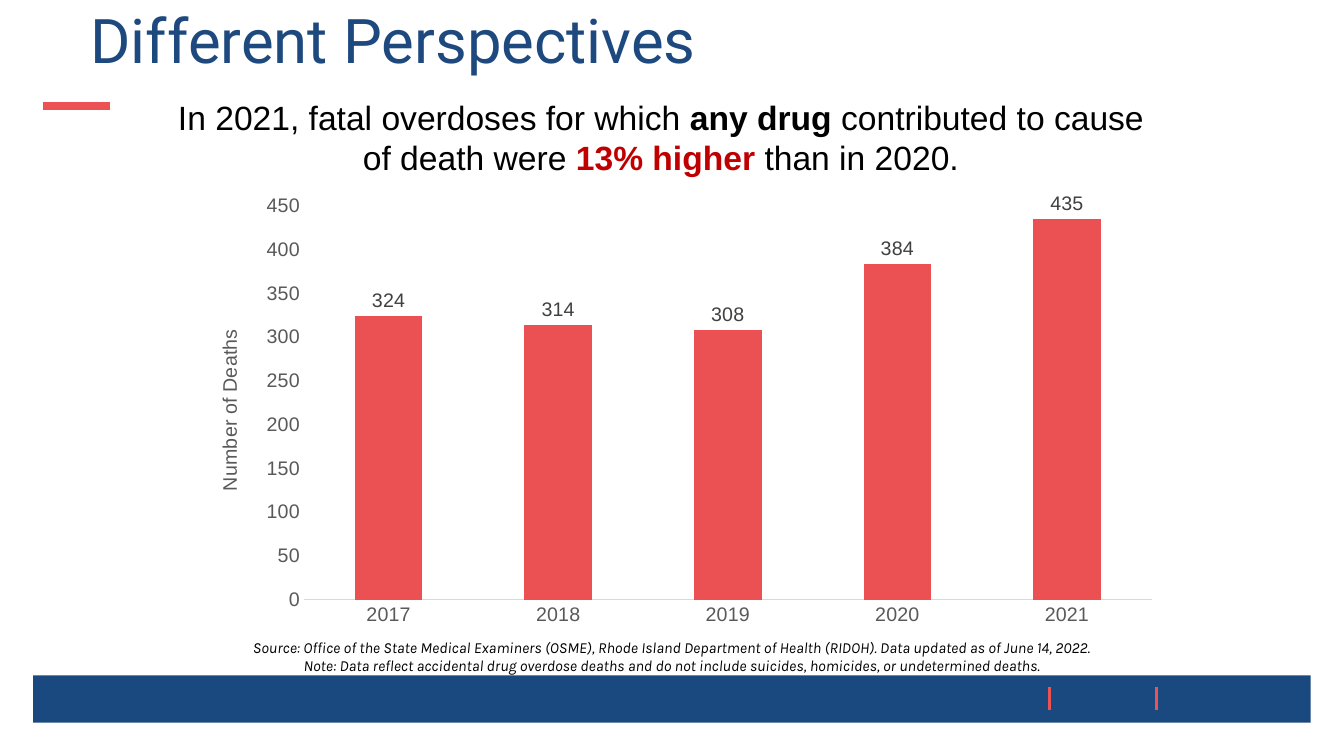
from typing import NamedTuple

from lxml import etree
from pptx import Presentation
from pptx.chart.data import CategoryChartData
from pptx.dml.color import RGBColor
from pptx.enum.chart import XL_CHART_TYPE, XL_LABEL_POSITION, XL_TICK_MARK
from pptx.enum.shapes import MSO_CONNECTOR, MSO_SHAPE
from pptx.enum.text import PP_ALIGN
from pptx.oxml import parse_xml
from pptx.oxml.ns import nsdecls, qn
from pptx.util import Inches, Pt

RED = RGBColor(0xEC, 0x51, 0x53)
BAR_RED = RGBColor(0xEB, 0x51, 0x52)
DARK_RED = RGBColor(0xC0, 0x00, 0x00)
BLUE = RGBColor(0x1A, 0x49, 0x7F)
TITLE_BLUE = RGBColor(0x1E, 0x49, 0x7F)
BLACK = RGBColor(0x00, 0x00, 0x00)
AXIS_GRAY = RGBColor(0x59, 0x59, 0x59)
LABEL_GRAY = RGBColor(0x40, 0x40, 0x40)
LINE_GRAY = RGBColor(0xD9, 0xD9, 0xD9)

CENTER, LEFT = PP_ALIGN.CENTER, PP_ALIGN.LEFT
NO_TICK = XL_TICK_MARK.NONE
COLUMNS = XL_CHART_TYPE.COLUMN_CLUSTERED
OUTSIDE_END = XL_LABEL_POSITION.OUTSIDE_END


class Rule(NamedTuple):
    x1: float
    y1: float
    x2: float
    y2: float
    width: float


class Run(NamedTuple):
    text: str
    bold: bool = False
    color: RGBColor = BLACK


class TextBlock(NamedTuple):
    left: float
    top: float
    width: float
    height: float
    paragraphs: list[list[Run]]
    font: str
    size: int
    align: PP_ALIGN = CENTER
    italic: bool = False
    spacing: float = 1.0


RULES = [
    Rule(0.43, 1.05, 1.09, 1.05, 6),
    *(Rule(x, 6.82, x, 7.04, 2.25) for x in (10.41, 11.47)),
]

TEXTS = [
    TextBlock(0.8, 0.05, 7.19, 0.88,
              [[Run("Different Perspectives", color=TITLE_BLUE)]],
              "Roboto", 44, LEFT, spacing=0.9),
    TextBlock(1.57, 0.91, 9.97, 0.91,
              [[Run("In 2021, fatal overdoses for which "),
                Run("any drug", True),
                Run(" contributed to cause of death were "),
                Run("13% higher", True, DARK_RED),
                Run(" than in 2020.")]],
              "Arial", 24),
    TextBlock(1.93, 6.28, 9.48, 0.47,
              [[Run("Source: Office of the State Medical Examiners (OSME), Rhode Island "
                    "Department of Health (RIDOH). Data updated as of June 14, 2022.")],
               [Run("Note: Data reflect accidental drug overdose deaths and do not include "
                    "suicides, homicides, or undetermined deaths.")]],
              "Karla", 11, italic=True),
]

DEATHS = {"2017": 324, "2018": 314, "2019": 308, "2020": 384, "2021": 435}


def add_rule(s, rule: Rule) -> None:
    line = s.shapes.add_connector(
        MSO_CONNECTOR.STRAIGHT, *(Inches(v) for v in rule[:4]))
    line.line.color.rgb = RED
    line.line.width = Pt(rule.width)
    etree.SubElement(line._element.spPr, qn("a:effectLst"))


def add_footer(s) -> None:
    bar = s.shapes.add_shape(MSO_SHAPE.RECTANGLE, Inches(0.33), Inches(6.7),
                             Inches(12.67), Inches(0.47))
    bar.shadow.inherit = False
    bar.fill.solid()
    bar.fill.fore_color.rgb = BLUE
    bar.line.fill.background()


def add_text(s, block: TextBlock) -> None:
    tf = s.shapes.add_textbox(*(Inches(v) for v in block[:4])).text_frame
    tf.word_wrap = True
    for i, runs in enumerate(block.paragraphs):
        p = tf.add_paragraph() if i else tf.paragraphs[0]
        p.alignment = block.align
        p.line_spacing = block.spacing
        p.font.name = block.font
        p.font.size = Pt(block.size)
        p.font.italic = block.italic
        for run in runs:
            r = p.add_run()
            r.text = run.text
            r.font.bold = run.bold
            r.font.color.rgb = run.color


def set_chart_font(font, color: RGBColor) -> None:
    font.name = "Arial"
    font.size = Pt(14)
    font.bold = False
    font.color.rgb = color


def set_plot_layout(chart, x: float, y: float, w: float, h: float) -> None:
    """Fix the inner plot area, in fractions of the chart."""
    plot_area = chart._chartSpace.chart.plotArea
    for old in plot_area.findall(qn("c:layout")):
        plot_area.remove(old)
    plot_area.insert(0, parse_xml(
        f'<c:layout {nsdecls("c")}><c:manualLayout><c:layoutTarget val="inner"/>'
        '<c:xMode val="edge"/><c:yMode val="edge"/>'
        f'<c:x val="{x}"/><c:y val="{y}"/><c:w val="{w}"/><c:h val="{h}"/>'
        '</c:manualLayout></c:layout>'))


def add_deaths_chart(s) -> None:
    data = CategoryChartData()
    data.categories = list(DEATHS)
    data.add_series("Series 1", list(DEATHS.values()))
    chart = s.shapes.add_chart(COLUMNS, Inches(1.84), Inches(1.81),
                               Inches(9.7), Inches(4.47), data).chart
    chart.has_legend = False
    chart.has_title = False
    set_chart_font(chart.font, BLACK)
    set_plot_layout(chart, 0.121, 0.052, 0.867, 0.874)

    years, counts = chart.category_axis, chart.value_axis
    for axis in (years, counts):
        axis.major_tick_mark = axis.minor_tick_mark = NO_TICK
        axis.has_major_gridlines = False
        set_chart_font(axis.tick_labels.font, AXIS_GRAY)
    years.format.line.color.rgb = LINE_GRAY
    years.format.line.width = Pt(0.75)
    counts.format.line.fill.background()
    counts.minimum_scale, counts.maximum_scale, counts.major_unit = 0, 450, 50
    tf = counts.axis_title.text_frame
    tf.text = "Number of Deaths"
    set_chart_font(tf.paragraphs[0].font, AXIS_GRAY)

    plot = chart.plots[0]
    plot.gap_width, plot.overlap = 151, 53
    plot.vary_by_categories = False
    fill = plot.series[0].format.fill
    fill.solid()
    fill.fore_color.rgb = BAR_RED
    plot.has_data_labels = True
    labels = plot.data_labels
    labels.show_value = True
    labels.position = OUTSIDE_END
    set_chart_font(labels.font, LABEL_GRAY)


def main() -> None:
    prs = Presentation()
    prs.slide_width, prs.slide_height = Inches(13.33), Inches(7.5)
    s = prs.slides.add_slide(prs.slide_layouts[6])
    add_footer(s)
    for rule in RULES:
        add_rule(s, rule)
    add_deaths_chart(s)
    for block in TEXTS:
        add_text(s, block)
    prs.save("out.pptx")


if __name__ == "__main__":
    main()
